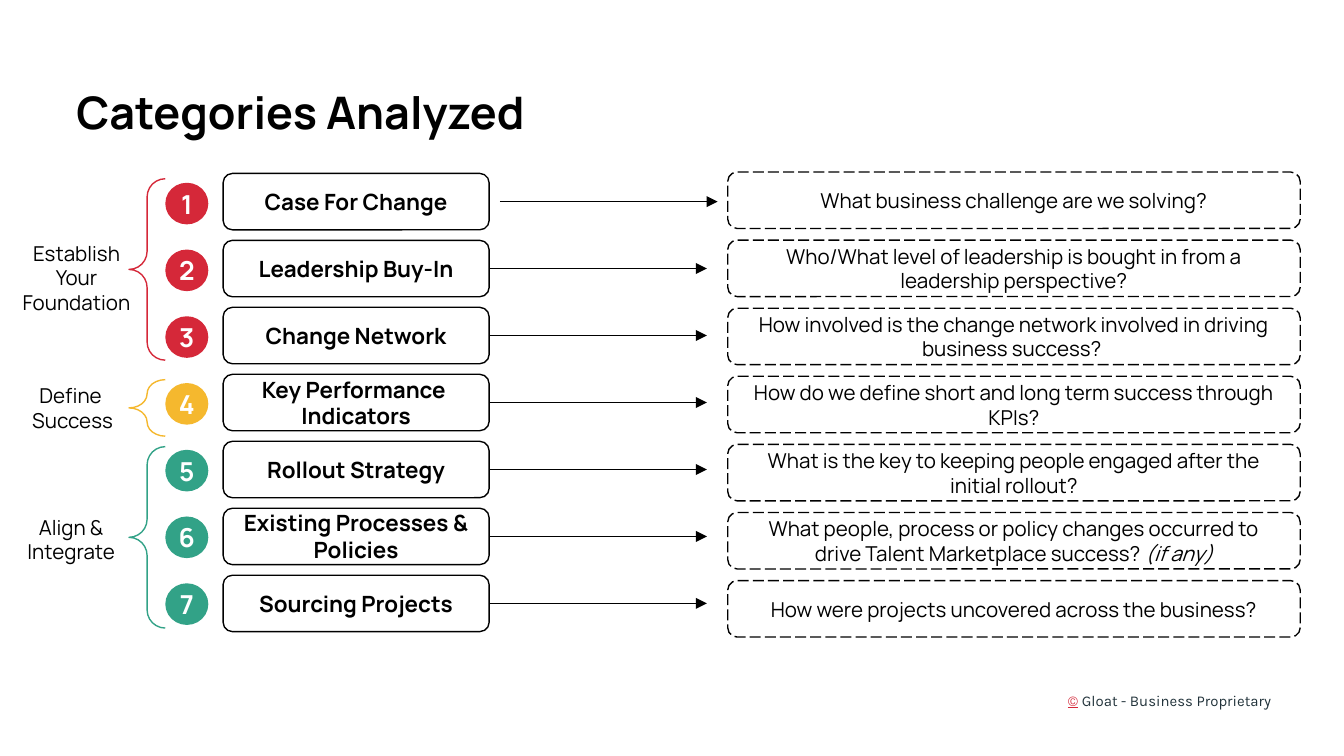
from typing import NamedTuple

from lxml.etree import SubElement
from pptx import Presentation
from pptx.dml.color import RGBColor
from pptx.enum.dml import MSO_LINE
from pptx.enum.shapes import MSO_CONNECTOR, MSO_SHAPE
from pptx.enum.text import MSO_ANCHOR, MSO_AUTO_SIZE, PP_ALIGN
from pptx.oxml.ns import qn
from pptx.util import Emu, Inches, Pt

SLIDE_WIDTH = Inches(10)
SLIDE_HEIGHT = Emu(SLIDE_WIDTH * 9 // 16)
UNIT = SLIDE_WIDTH / 100  # the slide is 100 grid columns wide

BLACK = RGBColor(0x00, 0x00, 0x00)
WHITE = RGBColor(0xFF, 0xFF, 0xFF)
SLATE = RGBColor(0x22, 0x33, 0x3B)
RED = RGBColor(0xD5, 0x28, 0x39)
YELLOW = RGBColor(0xF5, 0xB8, 0x2E)
GREEN = RGBColor(0x32, 0xA2, 0x87)

CATEGORIES = [
    ("Case For Change", "What business challenge are we solving?", ""),
    ("Leadership Buy-In",
     "Who/What level of leadership is bought in from a leadership perspective?", ""),
    ("Change Network",
     "How involved is the change network involved in driving business success? ", ""),
    ("Key Performance \vIndicators",
     "How do we define short and long term success through KPIs?", ""),
    ("Rollout Strategy",
     "What is the key to keeping people engaged after the initial rollout?", ""),
    ("Existing Processes & Policies",
     "What people, process or policy changes occurred to drive Talent Marketplace success? ",
     "(if any)"),
    ("Sourcing Projects", "How were projects uncovered across the business?", ""),
]


class Box(NamedTuple):
    """A rectangle in grid units."""
    left: float
    top: float
    width: float
    height: float

    def emu(self):
        return [Emu(round(length * UNIT)) for length in self]

    def row(self, index, height):
        """One of the evenly spread rows, one for each category."""
        pitch = (self.height - height) / (len(CATEGORIES) - 1)
        return Box(self.left, self.top + index * pitch, self.width, height)


# label, label box, colour, number of categories
GROUPS = [
    ("Establish Your Foundation", Box(0, 16.9, 11.4, 8.8), RED, 3),
    ("Define \vSuccess", Box(0, 27.5, 10.8, 5.6), YELLOW, 1),
    ("Align & Integrate", Box(0, 37.3, 10.6, 5.6), GREEN, 3),
]


def write(shape, text, size, color=BLACK, bold=None, align=PP_ALIGN.CENTER,
          anchor=MSO_ANCHOR.MIDDLE, inset=0.1, font_name="Manrope"):
    """Fill a shape with one formatted paragraph and return it."""
    frame = shape.text_frame
    frame.word_wrap = True
    frame.vertical_anchor = anchor
    frame.margin_left = frame.margin_right = Inches(inset)
    frame.margin_top = frame.margin_bottom = Inches(inset)
    paragraph = frame.paragraphs[0]
    paragraph.text = text
    paragraph.alignment = align
    for run in paragraph.runs:
        style_run(run, size, color, bold, font_name)
    return paragraph


def style_run(run, size, color, bold=None, font_name="Manrope"):
    run.font.name, run.font.size, run.font.bold = font_name, Pt(size), bold
    run.font.color.rgb = color


def add_shape(slide, kind, box, fill=None, line=None):
    shape = slide.shapes.add_shape(kind, *box.emu())
    shape.shadow.inherit = False
    if fill is None:
        shape.fill.background()
    else:
        shape.fill.solid()
        shape.fill.fore_color.rgb = fill
    if line is None:
        shape.line.fill.background()
    else:
        shape.line.color.rgb = line
        shape.line.width = Pt(0.75)
    return shape


def add_card(slide, box):
    card = add_shape(slide, MSO_SHAPE.ROUNDED_RECTANGLE, box, line=BLACK)
    card.adjustments[0] = 0.167
    return card


def add_title(slide, box):
    write(slide.shapes.add_textbox(*box.emu()), "Categories Analyzed", 24,
          bold=True, align=PP_ALIGN.LEFT)


def add_names(slide, box):
    cards = []
    for index, (name, _, _) in enumerate(CATEGORIES):
        card = add_card(slide, box.row(index, 4.2))
        write(card, name, 12, bold=True)
        cards.append(card)
    return cards


def add_numbers(slide, box):
    colors = [color for _, _, color, count in GROUPS for _ in range(count)]
    for index, color in enumerate(colors):
        circle = add_shape(slide, MSO_SHAPE.OVAL, box.row(index, 3.1), fill=color)
        write(circle, str(index + 1), 14, WHITE, bold=True, inset=0)


def add_questions(slide, box):
    for index, (_, question, remark) in enumerate(CATEGORIES):
        card = add_card(slide, box.row(index, 4.2))
        card.line.dash_style = MSO_LINE.LONG_DASH
        paragraph = write(card, question, 11)
        if remark:
            run = paragraph.add_run()
            run.text = remark
            style_run(run, 11, BLACK)
            run.font.italic = True


def add_arrows(slide, cards, length):
    """Point from each name towards its question; the first arrow stands apart."""
    for index, card in enumerate(cards):
        gap = 0 if index else Emu(round(0.8 * UNIT))
        start = card.left + card.width + gap
        middle = card.top + card.height // 2
        arrow = slide.shapes.add_connector(
            MSO_CONNECTOR.STRAIGHT, start, middle, start + round(length * UNIT), middle)
        if not gap:
            arrow.begin_connect(card, 3)
        arrow.line.color.rgb = BLACK
        arrow.line.width = Pt(0.75)
        SubElement(arrow.line._get_or_add_ln(), qn("a:tailEnd"), type="triangle")
        SubElement(arrow._element.spPr, qn("a:effectLst"))


def add_groups(slide, box):
    """Brace the rows of each group and label them on the left."""
    first = 0
    for label, label_box, color, count in GROUPS:
        top = box.row(first, 4.2).top + 0.4
        span = Box(box.left, top, box.width, 4.2 + 4.65 * (count - 1))
        brace = add_shape(slide, MSO_SHAPE.LEFT_BRACE, span, line=color)
        brace.adjustments[0] = brace.adjustments[1] = 0.5
        write(slide.shapes.add_textbox(*label_box.emu()), label, 11,
              anchor=MSO_ANCHOR.TOP)
        first += count


def add_footer(slide, box):
    footer = slide.shapes.add_textbox(*box.emu())
    paragraph = write(footer, "©", 8, RED, align=PP_ALIGN.RIGHT,
                      anchor=MSO_ANCHOR.TOP, font_name="Karla")
    footer.text_frame.auto_size = MSO_AUTO_SIZE.SHAPE_TO_FIT_TEXT
    paragraph.runs[0].font.underline = True
    run = paragraph.add_run()
    run.text = " Gloat - Business Proprietary"
    style_run(run, 8, SLATE, font_name="Karla")


def main():
    presentation = Presentation()
    presentation.slide_width, presentation.slide_height = SLIDE_WIDTH, SLIDE_HEIGHT
    slide = presentation.slides.add_slide(presentation.slide_layouts[6])
    add_footer(slide, Box(77.3, 50.8, 18.3, 3.4))
    add_title(slide, Box(4.7, 5.5, 90.6, 5.6))
    cards = add_names(slide, Box(16.6, 12.9, 19.8, 34.1))
    add_numbers(slide, Box(12.3, 13.6, 3.2, 32.9))
    add_arrows(slide, cards, 16.2)
    add_questions(slide, Box(54.15, 12.8, 42.6, 34.6))
    add_groups(slide, Box(9.6, 12.9, 2.7, 34.1))
    presentation.save("out.pptx")


if __name__ == "__main__":
    main()
